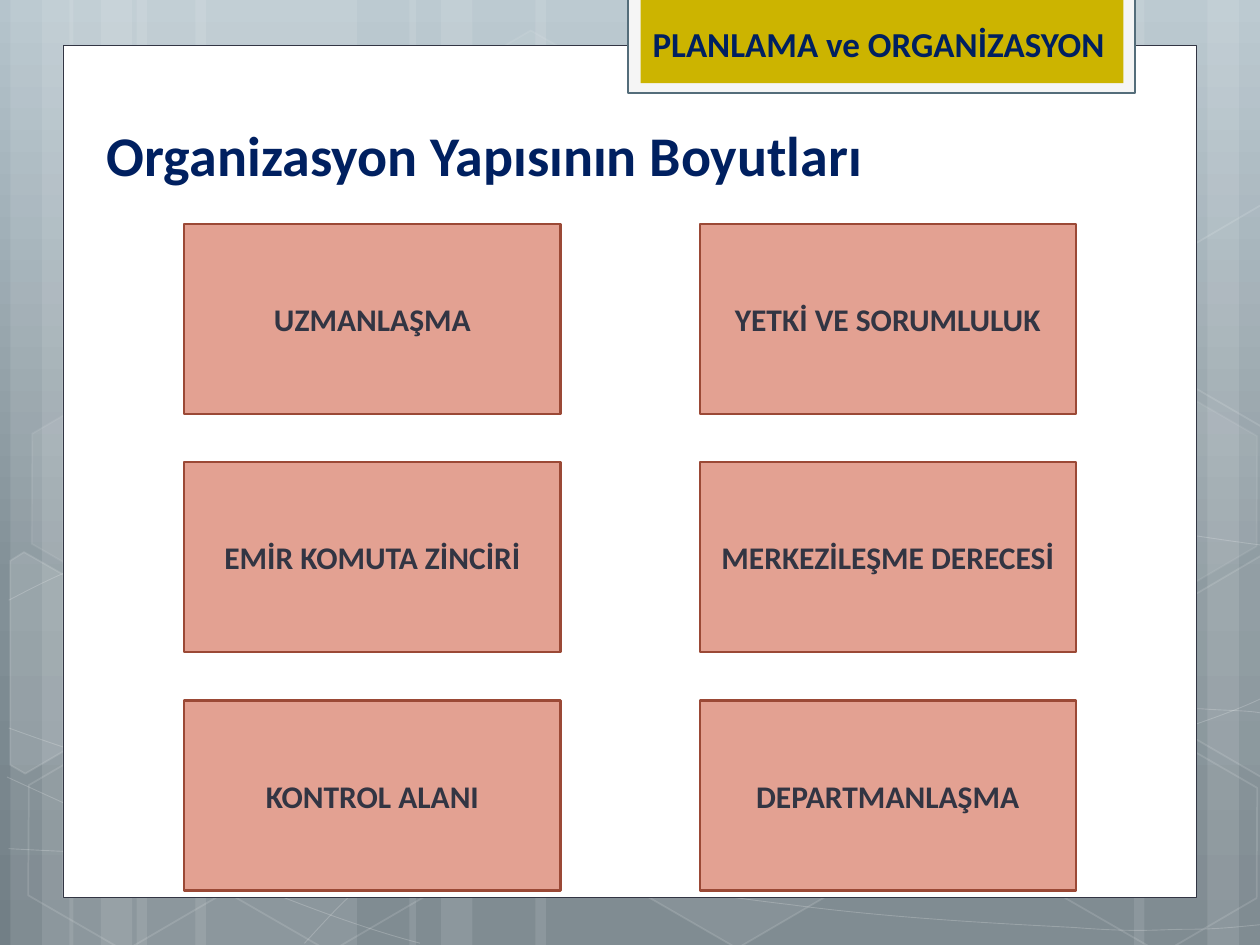
from copy import deepcopy
from itertools import product
from math import cos, radians, sin
from typing import NamedTuple, Optional

from lxml.etree import SubElement
from pptx import Presentation
from pptx.dml.color import RGBColor
from pptx.enum.shapes import MSO_SHAPE as Preset
from pptx.enum.text import MSO_ANCHOR as Anchor, MSO_AUTO_SIZE as AutoSize, PP_ALIGN as Align
from pptx.oxml.ns import qn
from pptx.util import Pt

WHITE = RGBColor(0xFF, 0xFF, 0xFF)
SLATE = RGBColor(0x32, 0x35, 0x43)
NAVY = RGBColor(0x00, 0x20, 0x60)
TAB_GREY = RGBColor(0xF5, 0xF5, 0xF5)
TAB_EDGE = RGBColor(0x54, 0x6D, 0x7A)
GOLD = RGBColor(0xCC, 0xB4, 0x00)
SALMON = RGBColor(0xE3, 0xA1, 0x92)
RUST = RGBColor(0x9B, 0x49, 0x36)
SKY = [(0, RGBColor(0xB5, 0xC4, 0xCC)), (0.62, RGBColor(0x82, 0x90, 0x97)),
       (1, RGBColor(0x72, 0x7F, 0x86))]
FONT = "Calibri"
TILT = 30


class Paint(NamedTuple):
    color: RGBColor
    opacity: int = 100
    width: float = 0


class Box(NamedTuple):
    left: float
    top: float
    width: float
    height: float


class Hexagon(NamedTuple):
    left: float
    top: float
    fill_opacity: int
    line_opacity: int


BANDS = [(78, 126), (6, 36), (24, 60), (111.6, 126), (39.6, 36), (57.6, 60),
         (528, 126), (690, 36), (648, 60), (306, 222), (234, 36), (252, 60)]
# Each curve is a start point followed by cubic segments of three points.
CURVES = [
    [(5, 485), (44, 487), (83, 489), (137, 488), (191, 487), (258, 486), (330, 479),
     (402, 472), (504, 459), (570, 444), (636, 431), (703, 409), (725, 397)],
    [(5, 343), (26, 332), (47, 321), (87, 310), (128, 300), (186, 284), (250, 279),
     (314, 274), (392, 273), (471, 279), (550, 284), (682, 307), (725, 312)],
    [(4, 444), (91, 484), (178, 523), (240, 539)],
    [(5, 416), (27, 424), (50, 432), (92, 444), (134, 454), (197, 472), (257, 485),
     (317, 497), (392, 510), (452, 517), (512, 525), (576, 528), (614, 530),
     (652, 533), (662, 531), (680, 531), (699, 531), (712, 529), (725, 528)],
    [(174, 539), (187, 525), (200, 510), (217, 498), (235, 485), (259, 470), (279, 460),
     (300, 450), (312, 446), (338, 438), (364, 431), (413, 421), (438, 416),
     (464, 411), (467, 411), (490, 410), (512, 408), (547, 405), (572, 405),
     (597, 404), (638, 405), (638, 405), (654, 405), (670, 405), (686, 405),
     (699, 406), (711, 406), (718, 407), (724, 408), (722, 408), (724, 408)],
]
HEXAGONS = [
    Hexagon(240.5, 26, 4, 8), Hexagon(358, 424, 6, 12), Hexagon(8, 425.5, 0, 12),
    Hexagon(10, 224.6, 7, 8), Hexagon(125.3, 426, 0, 12), Hexagon(542, 326, 10, 12),
    Hexagon(600.5, 427, 0, 12), Hexagon(600.5, 226, 7, 8),
]
LEFT_CUT = [(5.8, 320.4), (13.7, 315.4), (69.1, 347), (68.4, 410.4), (14.4, 442), (5.8, 437)]
LEFT_CENTER = (25.9, 385.2)
RIGHT_CUT = [(667, 349), (720.7, 317.5), (726.5, 321), (726.5, 441.4), (721.4, 444.2), (667, 412.6)]
RIGHT_CENTER = (709.2, 374.4)
RIGHT_CUT_RISE = 200.4

CARD_LABELS = ["UZMANLAŞMA", "YETKİ VE SORUMLULUK", "EMİR KOMUTA ZİNCİRİ",
               "MERKEZİLEŞME DERECESİ", "KONTROL ALANI", "DEPARTMANLAŞMA"]
CARD_LEFTS = [105.3, 399.8]
CARD_TOPS = [128 + 136.15 * row for row in range(3)]


def set_opacity(parent, opacity: int) -> None:
    if opacity < 100:
        color = parent.find(qn("a:solidFill")).find(qn("a:srgbClr"))
        SubElement(color, qn("a:alpha")).set("val", str(opacity * 1000))


def style(shape, fill: Optional[Paint] = None, line: Optional[Paint] = None) -> None:
    shape.shadow.inherit = False
    properties = shape._element.spPr
    if fill and fill.opacity:
        shape.fill.solid()
        shape.fill.fore_color.rgb = fill.color
        set_opacity(properties, fill.opacity)
    else:
        shape.fill.background()
    if line:
        shape.line.color.rgb = line.color
        shape.line.width = Pt(line.width)
        set_opacity(properties.find(qn("a:ln")), line.opacity)
    else:
        shape.line.fill.background()


def add_preset(slide, box: Box, fill: Optional[Paint] = None, line: Optional[Paint] = None,
               preset=Preset.RECTANGLE):
    shape = slide.shapes.add_shape(preset, *map(Pt, box))
    style(shape, fill, line)
    return shape


def add_outline(slide, points: list, fill: Optional[Paint], line: Paint, close: bool):
    corners = [(Pt(x), Pt(y)) for x, y in points]
    builder = slide.shapes.build_freeform(*corners[0])
    builder.add_line_segments(corners[1:], close=close)
    shape = builder.convert_to_shape()
    style(shape, fill, line)
    return shape


def add_curve(slide, points: list) -> None:
    """Draw an outline, then merge each three line steps into one cubic segment."""
    shape = add_outline(slide, points, None, Paint(WHITE, 20, 0.5), close=False)
    route = shape._element.find(".//" + qn("a:path"))
    steps = route.findall(qn("a:lnTo"))
    for first in range(0, len(steps), 3):
        segment = SubElement(route, qn("a:cubicBezTo"))
        for step in steps[first:first + 3]:
            segment.append(step[0])
            route.remove(step)


def add_cut_hexagon(slide, corners: list, center: tuple, opacity: int) -> None:
    """Draw upright corners as a level outline that is then tilted about its center."""
    cosine, sine = cos(radians(TILT)), sin(radians(TILT))
    offsets = [(x - center[0], y - center[1]) for x, y in corners]
    level = [(center[0] + dx * cosine + dy * sine, center[1] - dx * sine + dy * cosine)
             for dx, dy in offsets]
    shape = add_outline(slide, level, Paint(WHITE, opacity), Paint(WHITE, 12, 1), close=True)
    shape.rotation = TILT


def write(frame, words: str, size: float, color: RGBColor, align=Align.LEFT) -> None:
    frame.word_wrap = True
    paragraph = frame.paragraphs[0]
    paragraph.alignment = align
    run = paragraph.add_run()
    run.text = words
    run.font.name = FONT
    run.font.size = Pt(size)
    run.font.bold = True
    run.font.color.rgb = color


def add_heading(slide, box: Box, words: str, size: float) -> None:
    frame = slide.shapes.add_textbox(*map(Pt, box)).text_frame
    write(frame, words, size, NAVY)
    frame.auto_size = AutoSize.SHAPE_TO_FIT_TEXT


def paint_background(slide) -> None:
    fill = slide.background.fill
    fill.gradient()
    fill.gradient_angle = 270
    first_stop = slide.background._cSld.find(".//" + qn("a:gs"))
    first_stop.addnext(deepcopy(first_stop))
    for stop, (position, color) in zip(fill.gradient_stops, SKY):
        stop.position = position
        stop.color.rgb = color


def draw_backdrop(slide) -> None:
    for left, width in BANDS:
        add_preset(slide, Box(left, 0, width, 540), Paint(WHITE, 10))
    for curve in CURVES:
        add_curve(slide, curve)
    for left, top, fill_opacity, line_opacity in HEXAGONS:
        shape = add_preset(slide, Box(left, top, 126, 109.4), Paint(WHITE, fill_opacity),
                           Paint(WHITE, line_opacity, 1), Preset.HEXAGON)
        shape.adjustments[0] = 0.285
        shape.rotation = TILT
    add_cut_hexagon(slide, LEFT_CUT, LEFT_CENTER, 10)
    for rise, opacity in [(0, 4), (RIGHT_CUT_RISE, 0)]:
        corners = [(x, y - rise) for x, y in RIGHT_CUT]
        add_cut_hexagon(slide, corners, (RIGHT_CENTER[0], RIGHT_CENTER[1] - rise), opacity)


def add_card(slide, left: float, top: float, label: str) -> None:
    card = add_preset(slide, Box(left, top, 215, 108.6), Paint(SALMON), Paint(RUST, width=1.25))
    card.text_frame.vertical_anchor = Anchor.MIDDLE
    write(card.text_frame, label, 18, SLATE, Align.CENTER)


def main() -> None:
    deck = Presentation()
    deck.slide_width, deck.slide_height = Pt(720), Pt(540)
    slide = deck.slides.add_slide(deck.slide_layouts[6])
    paint_background(slide)
    draw_backdrop(slide)
    add_preset(slide, Box(36, 26, 648, 487), Paint(WHITE), Paint(SLATE, width=0.5))
    add_preset(slide, Box(359, -1.5, 289.6, 54.7), Paint(TAB_GREY), Paint(TAB_EDGE, width=1.25))
    add_preset(slide, Box(366, -1.5, 276, 49), Paint(GOLD))
    add_heading(slide, Box(365.8, 9.4, 300, 31.5), "PLANLAMA ve ORGANİZASYON", 20)
    add_heading(slide, Box(54, 65.5, 612, 46), "Organizasyon Yapısının Boyutları", 32)
    for (top, left), label in zip(product(CARD_TOPS, CARD_LEFTS), CARD_LABELS):
        add_card(slide, left, top, label)
    deck.save("out.pptx")


if __name__ == "__main__":
    main()
